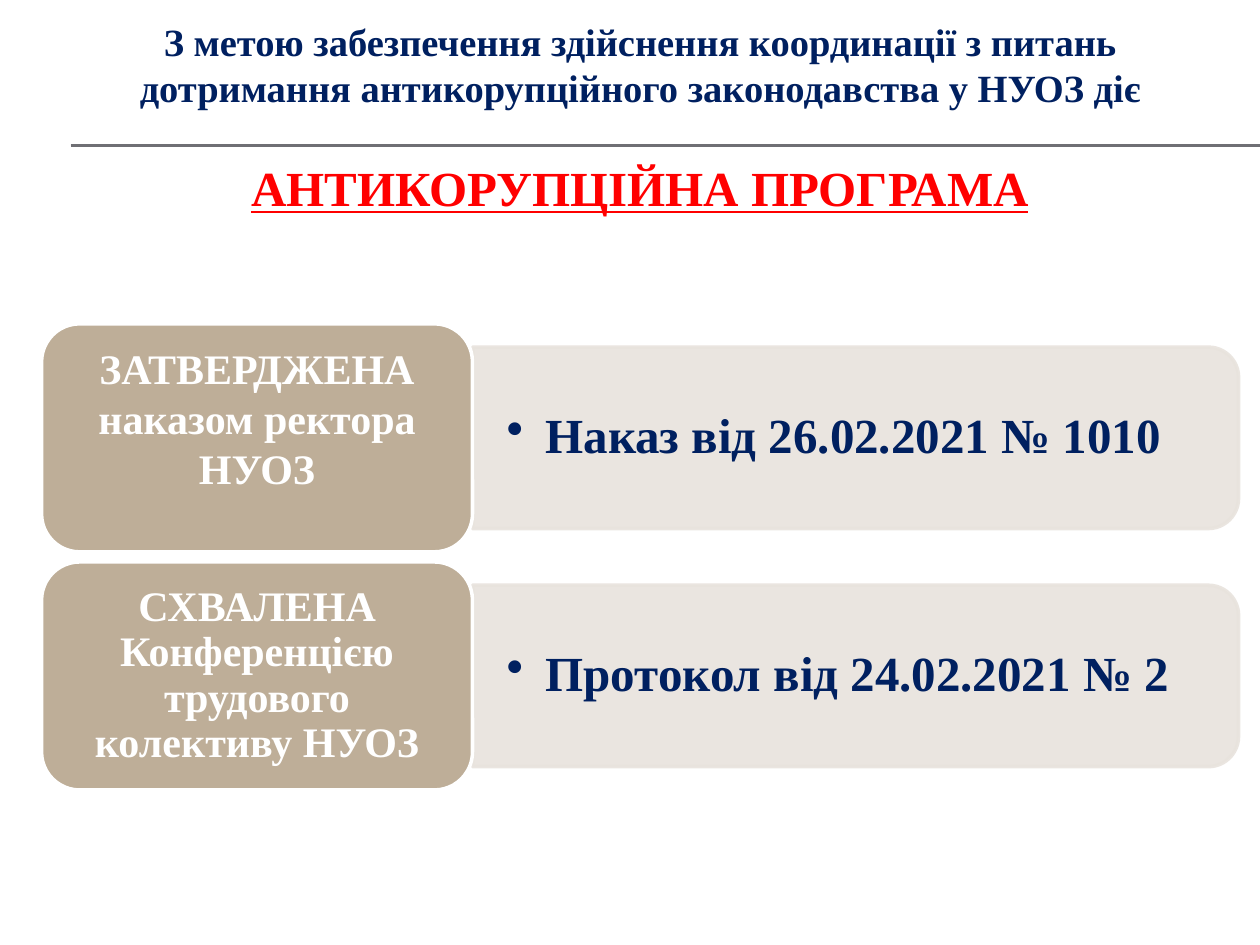
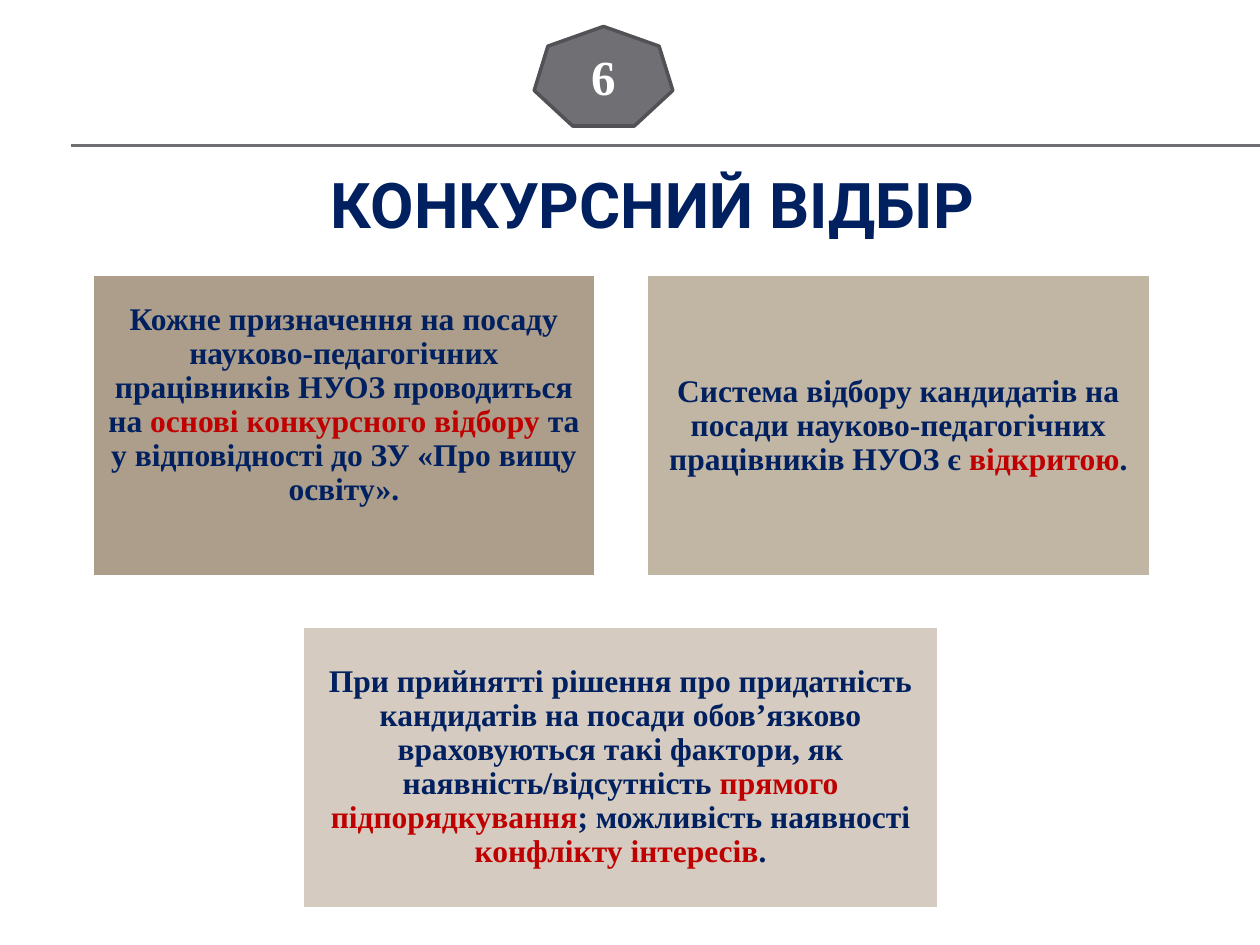
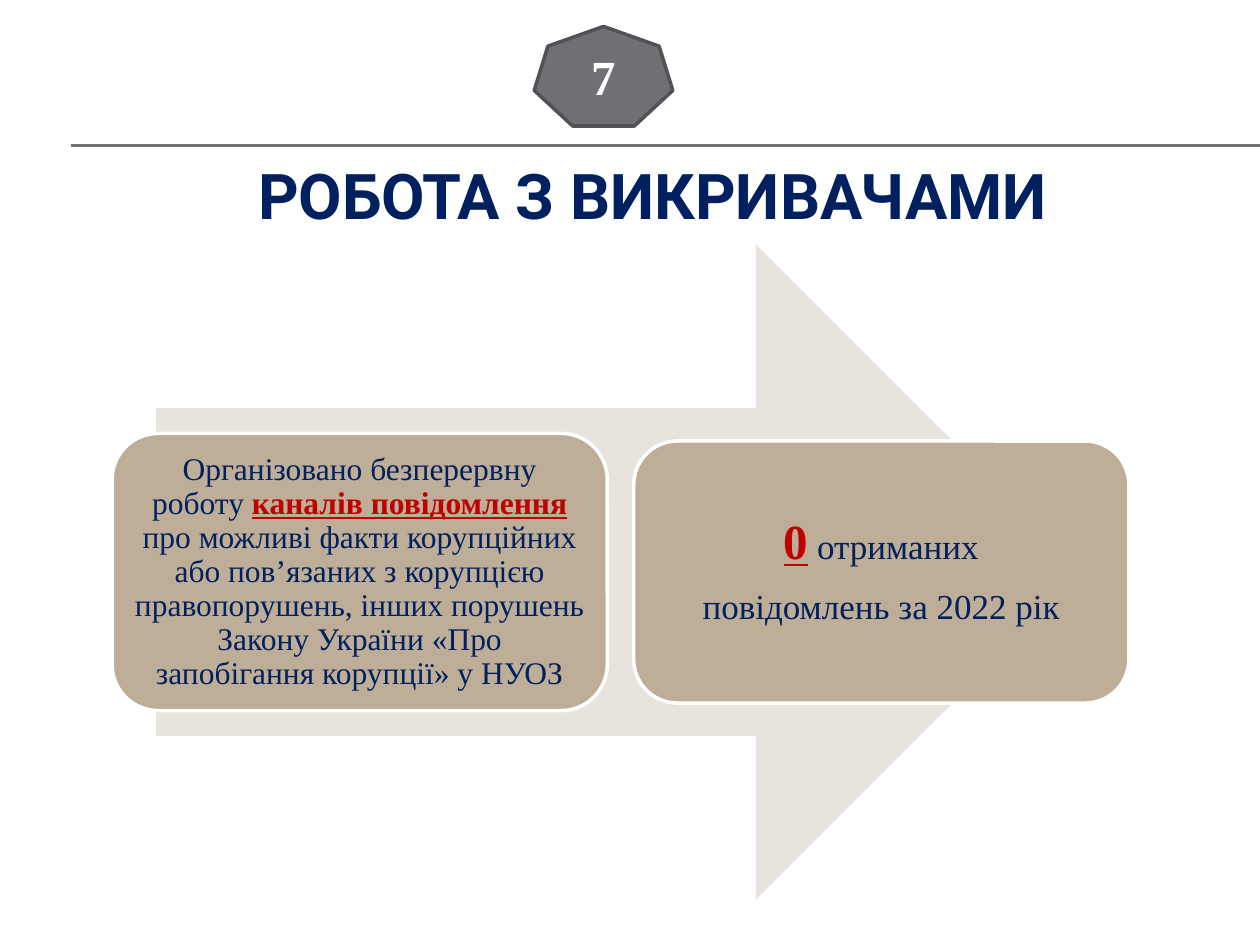
from lxml import etree
from pptx import Presentation
from pptx import util as u
from pptx.dml.color import RGBColor
from pptx.enum import shapes, text
from pptx.oxml.ns import qn

HEX = {
    "navy": "002060", "red": "FF0000", "wine": "C00000", "white": "FFFFFF",
    "gray": "6F6F74", "edge": "525256", "sand": "BEAE98", "pale": "E8E3DD",
    "dark": "AC9E8A", "mid": "C1B5A4", "light": "D5CBC0",
}
SERIF, SANS = "Times New Roman", "Roboto"
KIND = shapes.MSO_SHAPE
INSET = (0.1, 0.05, 0.1, 0.05)


def rgb(name):
    return RGBColor.from_string(HEX[name])


def inches(*vals):
    return [u.Inches(v) for v in vals]


def style(font, color=None, size=None, bold=None, line=None, face=None):
    if color:
        font.color.rgb = rgb(color)
    if size:
        font.size = u.Pt(size)
    if face:
        font.name = face
    font.bold, font.underline = bold, line


def write(frame, paras, size, color="navy", bold=True, face=SERIF, gap=0.9,
          inset=INSET, align=text.PP_ALIGN.CENTER):
    """Fill a frame; a paragraph is a list of strings or (string, style) pairs."""
    frame.word_wrap = True
    frame.auto_size = text.MSO_AUTO_SIZE.NONE
    frame.vertical_anchor = text.MSO_ANCHOR.MIDDLE
    (frame.margin_left, frame.margin_top,
     frame.margin_right, frame.margin_bottom) = inches(*inset)
    for i, parts in enumerate(paras):
        para = frame.paragraphs[0] if i == 0 else frame.add_paragraph()
        para.alignment, para.line_spacing = align, gap
        style(para.font, color, size, bold, face=face)
        for part in parts:
            words, look = (part, {}) if isinstance(part, str) else part
            run = para.add_run()
            run.text = words
            if look:
                style(run.font, **look)
    return frame.paragraphs


def add_box(slide, kind, box, fill, edge="white"):
    box = slide.shapes.add_shape(kind, *inches(*box))
    box.shadow.inherit = False
    box.fill.solid()
    box.fill.fore_color.rgb = rgb(fill)
    if edge:
        box.line.color.rgb = rgb(edge)
        box.line.width = u.Pt(2)
    else:
        box.line.fill.background()
    return box


def add_rules(deck, slide):
    """Draw the double header rule and move it to the master."""
    for i, y in enumerate((1.15, 1.16)):
        rule = slide.shapes.add_connector(
            shapes.MSO_CONNECTOR.STRAIGHT, *inches(0.56, y, 10, y))
        rule.line.color.rgb = rgb("gray")
        rule.line.width = u.Pt(0.75)
        node = rule.element
        etree.SubElement(node.spPr, qn("a:effectLst"))
        node.xpath(".//p:cNvPr")[0].set("id", str(20 + i))
        deck.slide_master.shapes.element.append(node)


def add_title(slide, box, paras, **look):
    title = slide.shapes.title
    title.left, title.top, title.width, title.height = inches(*box)
    return write(title.text_frame, paras, gap=1.0, **look)


def add_head(slide, num, words, high):
    """Title below the rule, with the slide's number in a badge above it."""
    add_title(slide, (0.43, 1.15, 9.5, high), [[words]], size=36, face=SANS)
    badge = add_box(slide, KIND.HEPTAGON, (4.24, 0.21, 1.1, 0.79), "gray", "edge")
    write(badge.text_frame, [[num]], 28, "white", gap=1.0)


def add_row(slide, box, label, fact, gap, foot):
    """A label tile with a tab to its right that holds one bulleted fact."""
    left, top, wide, high = box
    tile = 3.42
    tab, thick = wide - tile, 1.44
    x, y = left + tile, top + high / 2
    bar = add_box(slide, KIND.ROUND_2_SAME_RECTANGLE,
                  (x + (tab - thick) / 2, y - tab / 2, thick, tab), "pale", "pale")
    bar.rotation = 90
    for clr in bar.element.spPr.iter(qn("a:srgbClr")):
        etree.SubElement(clr, qn("a:alpha"), val="90000")

    note = slide.shapes.add_textbox(*inches(x, y - 0.65, tab - 0.07, 1.3))
    para = write(note.text_frame, [[fact]], 28, inset=(0.27, 0.14, 0.27, 0.14),
                 align=text.PP_ALIGN.LEFT)[0]
    props = para._p.get_or_add_pPr()
    props.set("marL", str(u.Inches(0.31)))
    props.set("indent", str(u.Inches(-0.31)))
    mark = etree.Element(qn("a:buChar"), char="•")
    props.find(qn("a:lnSpc")).addnext(mark)

    head = add_box(slide, KIND.ROUNDED_RECTANGLE, (left, top, tile, high), "sand")
    write(head.text_frame, [[label]], 24, "white", gap=gap,
          inset=(0.1, 0.05, 0.1, foot))


def add_card(slide, kind, box, fill, paras, size=18, bold=True, pad=0.07, foot=0.07):
    card = add_box(slide, kind, box, fill)
    return write(card.text_frame, paras, size, bold=bold,
                 inset=(pad, pad, pad, foot))


def program(slide):
    paras = add_title(slide, (0.33, 0, 9.5, 1.86), [
        ["З метою забезпечення здійснення координації з питань "
         "дотримання антикорупційного законодавства у НУОЗ діє"],
        [("АНТИКОРУПЦІЙНА ПРОГРАМА",
          dict(color="red", size=28, bold=True, line=True))],
    ], size=22)
    paras[1].space_before = u.Pt(27)
    rows = [
        ("ЗАТВЕРДЖЕНА наказом ректора НУОЗ", "Наказ від 26.02.2021 № 1010", 1.0, 0.37),
        ("СХВАЛЕНА Конференцією трудового колективу НУОЗ",
         "Протокол від 24.02.2021 № 2", 0.9, 0.05),
    ]
    for i, row in enumerate(rows):
        add_row(slide, (0.33, 2.57 + 1.89 * i, 9.5, 1.81), *row)


def contest(slide):
    add_head(slide, "6", "КОНКУРСНИЙ ВІДБІР", 0.92)
    wine = dict(color="wine", bold=True)
    cards = [
        ((0.73, 2.18, 4, 2.4), "dark", 0.39, [
            "Кожне призначення на посаду науково-педагогічних працівників "
            "НУОЗ проводиться на ",
            ("основі конкурсного відбору ", wine),
            "та у відповідності до ЗУ «Про вищу освіту»."]),
        ((5.13, 2.18, 4, 2.4), "mid", 0.07, [
            "Система відбору кандидатів на посади науково-педагогічних "
            "працівників НУОЗ є ",
            ("відкритою", wine), "."]),
        ((2.4, 4.97, 5.05, 2.24), "light", 0.07, [
            "При прийнятті рішення про придатність кандидатів на посади "
            "обов’язково враховуються такі фактори, як наявність/відсутність ",
            ("прямого підпорядкування", wine), "; можливість наявності ",
            ("конфлікту інтересів", wine), "."]),
    ]
    for box, fill, foot, parts in cards:
        add_card(slide, KIND.RECTANGLE, box, fill, [parts], foot=foot)


def reports(slide):
    add_head(slide, "7", "РОБОТА З ВИКРИВАЧАМИ", 0.79)
    add_box(slide, KIND.RIGHT_ARROW, (1.24, 1.94, 7.36, 5.2), "pale", None)
    wine = dict(color="wine", bold=True, line=True)
    add_card(slide, KIND.ROUNDED_RECTANGLE, (0.89, 3.44, 3.93, 2.2), "sand", [[
        "Організовано безперервну роботу ",
        ("каналів повідомлення ", wine),
        "про можливі факти корупційних або пов’язаних з корупцією "
        "правопорушень, інших порушень Закону України «Про запобігання "
        "корупції» у НУОЗ"]], bold=False)
    paras = add_card(slide, KIND.ROUNDED_RECTANGLE, (5.03, 3.5, 3.93, 2.08), "sand", [
        [("0", dict(wine, size=28)), " отриманих"],
        ["повідомлень за 2022 рік"]], size=20, bold=False, pad=0.12, foot=0.12)
    paras[0].space_after = u.Pt(11)


def main():
    deck = Presentation()
    deck.slide_width, deck.slide_height = inches(10, 7.5)
    for i, build in enumerate((program, contest, reports)):
        slide = deck.slides.add_slide(deck.slide_layouts[5])
        if i == 0:
            add_rules(deck, slide)
        build(slide)
    deck.save("out.pptx")


if __name__ == "__main__":
    main()
